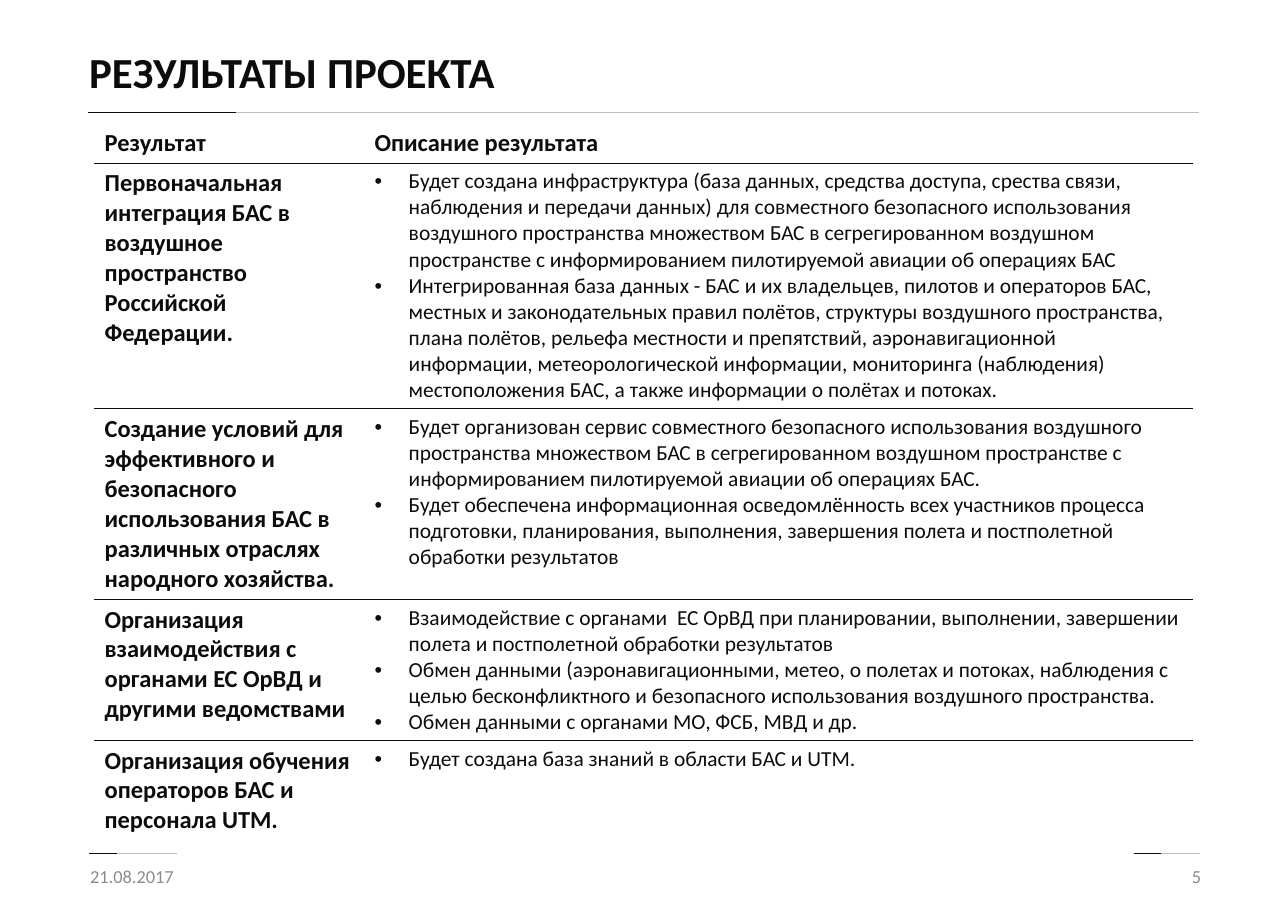
from lxml.etree import SubElement
from pptx import Presentation
from pptx.dml.color import RGBColor
from pptx.enum.shapes import MSO_CONNECTOR as Link
from pptx.enum.text import MSO_ANCHOR as Anchor, PP_ALIGN as Align
from pptx.oxml import parse_xml
from pptx.oxml.ns import nsdecls, qn
from pptx.util import Inches, Pt

INK = RGBColor(0x0C, 0x0C, 0x0C)
PALE = RGBColor(0xBF, 0xBF, 0xBF)
GREY = RGBColor(0x8C, 0x8C, 0x8C)
FONT = "Calibri"
PLAIN = "{2D5ABB26-0587-4C30-8999-92F81FD0307C}"  # no style, no grid

HEAD = ("Результат", "Описание результата")
GOALS = [
    ("Первоначальная интеграция БАС в воздушное пространство Российской Федерации.", [
        "Будет создана инфраструктура (база данных, средства доступа, срества связи, "
        "наблюдения и передачи данных) для совместного безопасного использования "
        "воздушного пространства множеством БАС в сегрегированном воздушном "
        "пространстве с информированием пилотируемой авиации об операциях БАС",
        "Интегрированная база данных - БАС и их владельцев, пилотов и операторов БАС, "
        "местных и законодательных правил полётов, структуры воздушного пространства, "
        "плана полётов, рельефа местности и препятствий, аэронавигационной "
        "информации, метеорологической информации, мониторинга (наблюдения) "
        "местоположения БАС, а также информации о полётах и потоках."]),
    ("Создание условий для эффективного и безопасного использования БАС в "
     "различных отраслях народного хозяйства.", [
        "Будет организован сервис совместного безопасного использования воздушного "
        "пространства множеством БАС в сегрегированном воздушном пространстве с "
        "информированием пилотируемой авиации об операциях БАС.",
        "Будет обеспечена информационная осведомлённость всех участников процесса "
        "подготовки, планирования, выполнения, завершения полета и постполетной "
        "обработки результатов"]),
    ("Организация взаимодействия с органами ЕС ОрВД и другими ведомствами", [
        "Взаимодействие с органами  ЕС ОрВД при планировании, выполнении, завершении "
        "полета и постполетной обработки результатов",
        "Обмен данными (аэронавигационными, метео, о полетах и потоках, наблюдения с "
        "целью бесконфликтного и безопасного использования воздушного пространства.",
        "Обмен данными с органами МО, ФСБ, МВД и др."]),
    ("Организация обучения операторов БАС и персонала UTM.", [
        "Будет создана база знаний в области БАС и UTM."]),
]
WIDTHS = (2.45, 7.53)
HEIGHTS = (0.37, 2.23, 1.73, 1.28, 1.11)


def write(para, text, size, color=INK, bold=False):
    run = para.add_run()
    run.text = text
    font = run.font
    font.name, font.size, font.bold = FONT, Pt(size), bold
    font.color.rgb = color


def border(cell, side):
    cell._tc.get_or_add_tcPr().append(parse_xml(
        f'<a:{side} {nsdecls("a")} w="3175"><a:solidFill>'
        f'<a:srgbClr val="{INK}"/></a:solidFill></a:{side}>'))


deck = Presentation()
deck.slide_width, deck.slide_height = Inches(11.69), Inches(8.27)
slide = deck.slides.add_slide(deck.slide_layouts[5])
shapes = slide.shapes

# Rules: a pale line with a dark start
for left, right, mid, top in ((0.8, 10.88, 2.14, 1.02),
                              (10.29, 10.89, 10.54, 7.75),
                              (0.81, 1.61, 1.06, 7.75)):
    for end, color in ((right, PALE), (mid, INK)):
        rule = shapes.add_connector(Link.STRAIGHT, Inches(left), Inches(top),
                                    Inches(end), Inches(top))
        rule.line.color.rgb = color
        rule.line.width = Pt(0.5)
        SubElement(rule._element.spPr, qn("a:effectLst"))

# Title
title = shapes.title
title.left, title.top = Inches(0.71), Inches(0.28)
title.width, title.height = Inches(7.97), Inches(0.8)
frame = title.text_frame
frame.vertical_anchor = Anchor.MIDDLE
para = frame.paragraphs[0]
para.alignment, para.line_spacing = Align.LEFT, 0.9
write(para, "РЕЗУЛЬТАТЫ ПРОЕКТА", 28, bold=True)

# Date and page number
for left, text, align in ((0.72, "21.08.2017", Align.LEFT), (8.37, "5", Align.RIGHT)):
    box = shapes.add_textbox(Inches(left), Inches(7.73), Inches(2.63), Inches(0.44))
    frame = box.text_frame
    frame.word_wrap, frame.vertical_anchor = True, Anchor.MIDDLE
    para = frame.paragraphs[0]
    para.alignment = align
    write(para, text, 12, GREY)

# Table of results
table = shapes.add_table(len(HEIGHTS), len(WIDTHS), Inches(0.85), Inches(1.11),
                         Inches(sum(WIDTHS)), Inches(sum(HEIGHTS))).table
table._tbl.tblPr.find(qn("a:tableStyleId")).text = PLAIN
table.first_row = table.horz_banding = False
for col, width in zip(table.columns, WIDTHS):
    col.width = Inches(width)
for row, height in zip(table.rows, HEIGHTS):
    row.height = Inches(height)

last = len(HEIGHTS) - 1
for i, row in enumerate(table.rows):
    for cell in row.cells:
        if i > 0:
            border(cell, "lnT")
        if i < last:
            border(cell, "lnB")
        cell.fill.background()

for cell, text in zip(table.rows[0].cells, HEAD):
    write(cell.text_frame.paragraphs[0], text, 16, bold=True)

for i, (goal, notes) in enumerate(GOALS, 1):
    write(table.cell(i, 0).text_frame.paragraphs[0], goal, 16, bold=True)
    frame = table.cell(i, 1).text_frame
    for j, note in enumerate(notes):
        para = frame.add_paragraph() if j else frame.paragraphs[0]
        props = para._p.get_or_add_pPr()
        props.set("marL", str(Inches(0.31)))
        props.set("indent", str(-Inches(0.31)))
        SubElement(props, qn("a:buFont"), typeface="Arial")
        SubElement(props, qn("a:buChar"), char="•")
        write(para, note, 14)

deck.save("out.pptx")
